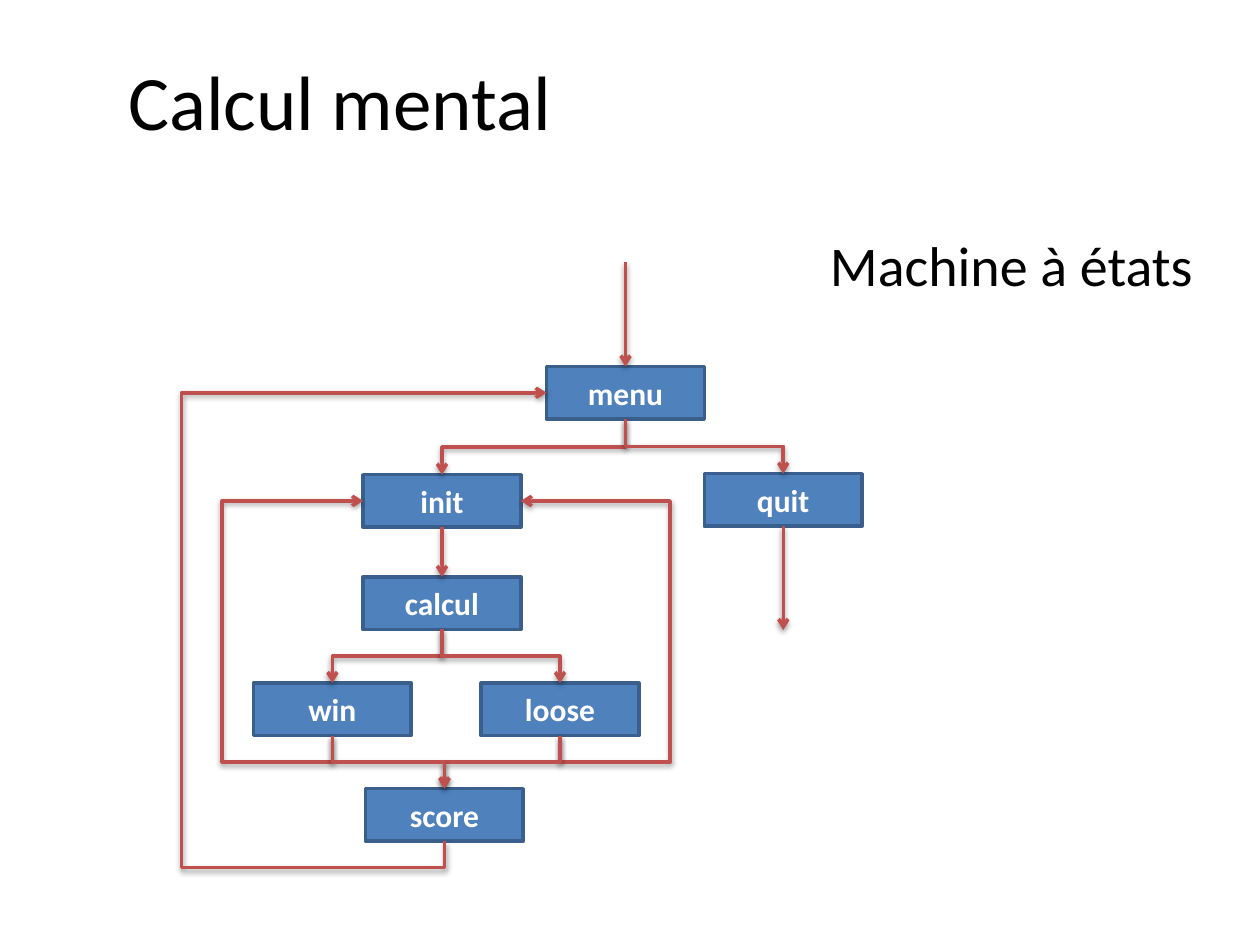
"""Build the state machine slide of the mental arithmetic game."""
from lxml.etree import SubElement
from pptx import Presentation
from pptx.dml.color import RGBColor
from pptx.enum.shapes import MSO_CONNECTOR as CONN, MSO_SHAPE as SHAPE
from pptx.enum.text import MSO_ANCHOR as ANCHOR, PP_ALIGN as ALIGN
from pptx.oxml import parse_xml
from pptx.oxml.ns import nsdecls, qn
from pptx.util import Cm, Pt

BLACK = RGBColor(0x00, 0x00, 0x00)
WHITE = RGBColor(0xFF, 0xFF, 0xFF)
BLUE = RGBColor(0x4F, 0x81, 0xBD)
NAVY = RGBColor(0x3A, 0x5F, 0x8C)
RED = RGBColor(0xC0, 0x50, 0x4D)
TOP, LEFT, BOTTOM, RIGHT = range(4)
BOX_W, BOX_H = Cm(3.18), Cm(1.06)
SHADOW = (
    f'<a:effectLst {nsdecls("a")}><a:outerShdw blurRad="40000" dist="20000" '
    'dir="5400000" rotWithShape="0"><a:srgbClr val="000000">'
    '<a:alpha val="38000"/></a:srgbClr></a:outerShdw></a:effectLst>'
)


def write(s, text, size, color, align, anchor, bold=False):
    tf = s.text_frame
    tf.word_wrap = True
    tf.vertical_anchor = anchor
    tf.text = text
    p = tf.paragraphs[0]
    p.alignment = align
    font = p.runs[0].font
    font.name, font.size, font.bold = "Calibri", Pt(size), bold
    font.color.rgb = color


def style_arrow(c):
    c.line.color.rgb = RED
    c.line.width = Pt(2)
    SubElement(c.line._get_or_add_ln(), qn("a:tailEnd"), type="arrow")
    c._element.spPr.append(parse_xml(SHADOW))


prs = Presentation()
prs.slide_width, prs.slide_height = Cm(25.4), Cm(19.05)
shapes = prs.slides.add_slide(prs.slide_layouts[6]).shapes

title = shapes.add_textbox(Cm(2.34), Cm(0.43), Cm(14.38), Cm(3.18))
write(title, "Calcul mental", 44, BLACK, ALIGN.LEFT, ANCHOR.MIDDLE)
subtitle = shapes.add_textbox(Cm(12.9), Cm(4.52), Cm(11.4), Cm(2.39))
write(subtitle, "Machine à états", 32, BLACK, ALIGN.RIGHT, ANCHOR.TOP)

states = {}
for name, x, y in [
    ("menu", 11.02, 7.39),
    ("init", 7.32, 9.57),
    ("quit", 14.2, 9.55),
    ("calcul", 7.32, 11.63),
    ("win", 5.11, 13.77),
    ("loose", 9.7, 13.77),
    ("score", 7.37, 15.9),
]:
    s = shapes.add_shape(SHAPE.RECTANGLE, Cm(x), Cm(y), BOX_W, BOX_H)
    s.shadow.inherit = False
    s.fill.solid()
    s.fill.fore_color.rgb = BLUE
    s.line.color.rgb = NAVY
    s.line.width = Pt(2)
    write(s, name, 18, WHITE, ALIGN.CENTER, ANCHOR.MIDDLE, True)
    states[name] = s

for source, target, side, lane in [
    ("win", "init", LEFT, 4.48),
    ("loose", "init", RIGHT, 13.51),
    ("loose", "score", TOP, None),
    ("calcul", "win", TOP, None),
    ("calcul", "loose", TOP, None),
    ("menu", "init", TOP, None),
    ("menu", "quit", TOP, None),
    ("win", "score", TOP, None),
    ("score", "menu", LEFT, 3.66),
]:
    a, b = states[source], states[target]
    x1, y1 = a.left + BOX_W // 2, a.top + BOX_H
    x2 = b.left + {LEFT: 0, TOP: BOX_W // 2, RIGHT: BOX_W}[side]
    y2 = b.top + (0 if side == TOP else BOX_H // 2)
    c = shapes.add_connector(CONN.ELBOW, x1, y1, x2, y2)
    c.begin_connect(a, BOTTOM)
    c.end_connect(b, side)
    w, h = abs(y2 - y1), abs(x2 - x1)
    c.left, c.top = (x1 + x2 - w) // 2, (y1 + y2 - h) // 2
    c.width, c.height = w, h

    down_right = side == TOP and x2 > x1
    xfrm = c._element.spPr.find(qn("a:xfrm"))
    xfrm.set("rot", "16200000" if down_right else "5400000")
    xfrm.set("flipH", str(int(down_right or side != TOP)))
    xfrm.set("flipV", str(int(side == LEFT)))
    bends = [0.5]
    geom = c._element.spPr.find(qn("a:prstGeom"))
    if lane:
        geom.set("prst", "bentConnector4")
        bends = [Cm(0.53) / (y2 - y1), (Cm(lane) - x1) / (x2 - x1)]
    guides = geom.find(qn("a:avLst"))
    for i, bend in enumerate(bends, 1):
        SubElement(guides, qn("a:gd"), name=f"adj{i}", fmla=f"val {round(bend * 100000)}")
    style_arrow(c)

for source, target, x, y1, y2 in [
    ("init", "calcul", 8.91, 10.63, 11.63),
    (None, "menu", 12.61, 5.28, 7.39),
    ("quit", None, 15.79, 10.61, 12.7),
]:
    c = shapes.add_connector(CONN.STRAIGHT, Cm(x), Cm(y1), Cm(x), Cm(y2))
    if source:
        c.begin_connect(states[source], BOTTOM)
    if target:
        c.end_connect(states[target], TOP)
    style_arrow(c)

prs.save("out.pptx")
